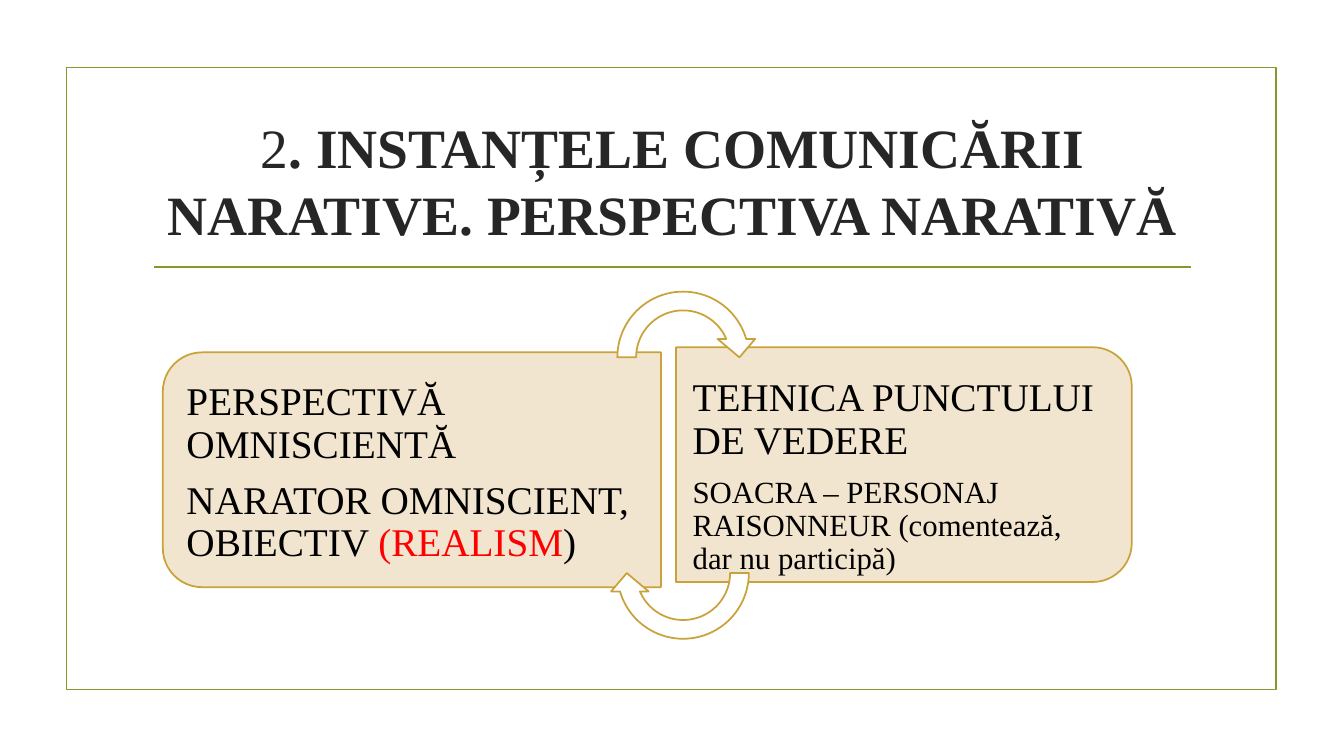
from pptx import Presentation
from pptx.dml.color import RGBColor
from pptx.enum.shapes import MSO_CONNECTOR, MSO_SHAPE
from pptx.enum.text import MSO_ANCHOR, PP_ALIGN
from pptx.oxml.ns import qn
from pptx.util import Pt
from lxml import etree

PX = 9144
FONT = "Times New Roman"
COLORS = {
    "green": "83992A",
    "gold": "C9A23A",
    "sand": "F2E5CF",
    "white": "FFFFFF",
    "title": "262626",
    "black": "000000",
    "red": "FF0000",
}
RECTANGLE = MSO_SHAPE.RECTANGLE
HALF_ROUNDED = MSO_SHAPE.ROUND_2_SAME_RECTANGLE
CIRCULAR_ARROW = MSO_SHAPE.CIRCULAR_ARROW
STRAIGHT = MSO_CONNECTOR.STRAIGHT
TOP, MIDDLE = MSO_ANCHOR.TOP, MSO_ANCHOR.MIDDLE
LEFT, CENTER = PP_ALIGN.LEFT, PP_ALIGN.CENTER

presentation = Presentation()
presentation.slide_width = 1333 * PX
presentation.slide_height = 750 * PX
slide = presentation.slides.add_slide(presentation.slide_layouts[6])


def add_outlined(kind, box, line, fill=None, rotation=0, adjustments=()):
    shape = slide.shapes.add_shape(kind, *(value * PX for value in box))
    shape.shadow.inherit = False
    shape.rotation = rotation
    for index, value in enumerate(adjustments):
        shape.adjustments[index] = value
    if fill:
        shape.fill.solid()
        shape.fill.fore_color.rgb = RGBColor.from_string(COLORS[fill])
    else:
        shape.fill.background()
    shape.line.color.rgb = RGBColor.from_string(COLORS[line])
    shape.line.width = Pt(1.25)


def add_text(paragraphs, box, insets=(10, 5, 10, 5), anchor=TOP, align=LEFT,
             line_spacing=1.0, space_after=0):
    frame = slide.shapes.add_textbox(*(value * PX for value in box)).text_frame
    frame.word_wrap = True
    frame.vertical_anchor = anchor
    frame.margin_left, frame.margin_top, frame.margin_right, frame.margin_bottom = (
        value * PX for value in insets)
    for index, runs in enumerate(paragraphs):
        paragraph = frame.add_paragraph() if index else frame.paragraphs[0]
        paragraph.alignment = align
        paragraph.line_spacing = line_spacing
        paragraph.space_after = Pt(space_after)
        for text, size, color, bold in runs:
            run = paragraph.add_run()
            run.text = text
            run.font.name = FONT
            run.font.size = Pt(size)
            run.font.bold = bold
            run.font.color.rgb = RGBColor.from_string(COLORS[color])


add_outlined(RECTANGLE, (66, 67, 1200, 617), "green")

divider = slide.shapes.add_connector(STRAIGHT, 153 * PX, 265 * PX, 1181 * PX, 265 * PX)
divider.line.color.rgb = RGBColor.from_string(COLORS["green"])
divider.line.width = Pt(1.25)
etree.SubElement(divider.element.spPr, qn("a:effectLst"))

add_text(
    [[("2", 39.6, "title", False),
      (". INSTANȚELE COMUNICĂRII NARATIVE. PERSPECTIVA NARATIVĂ", 39.6, "title", True)]],
    (142, 107, 1050, 143), anchor=MIDDLE, align=CENTER)

perspective = [
    [("PERSPECTIVĂ OMNISCIENTĂ", 28, "black", False)],
    [("NARATOR OMNISCIENT, OBIECTIV ", 28, "black", False),
     ("(REALISM", 28, "red", False),
     (")", 28, "black", False)],
]
technique = [
    [("TEHNICA PUNCTULUI DE VEDERE", 28, "black", False)],
    [("SOACRA – PERSONAJ RAISONNEUR (comentează, dar nu participă)", 22, "black", False)],
]
panels = [
    ((292, 219, 233, 494), 270, perspective, (173, 360, 483, 210), (12, 19, 17, 19)),
    ((780, 235, 233, 452), 90, technique, (670, 356, 441, 210), (17, 19, 12, 19)),
]
for panel_box, rotation, paragraphs, text_box, insets in panels:
    add_outlined(HALF_ROUNDED, panel_box, "gold", "sand", rotation, (0.167, 0))
    add_text(paragraphs, text_box, insets, line_spacing=0.9, space_after=10)

for top, rotation in ((280, 0), (494, 180)):
    add_outlined(CIRCULAR_ARROW, (603, top, 149, 149), "gold", "white", rotation,
                 (0.125, 11.42, 204.58, 108, 0.125))

presentation.save("out.pptx")
